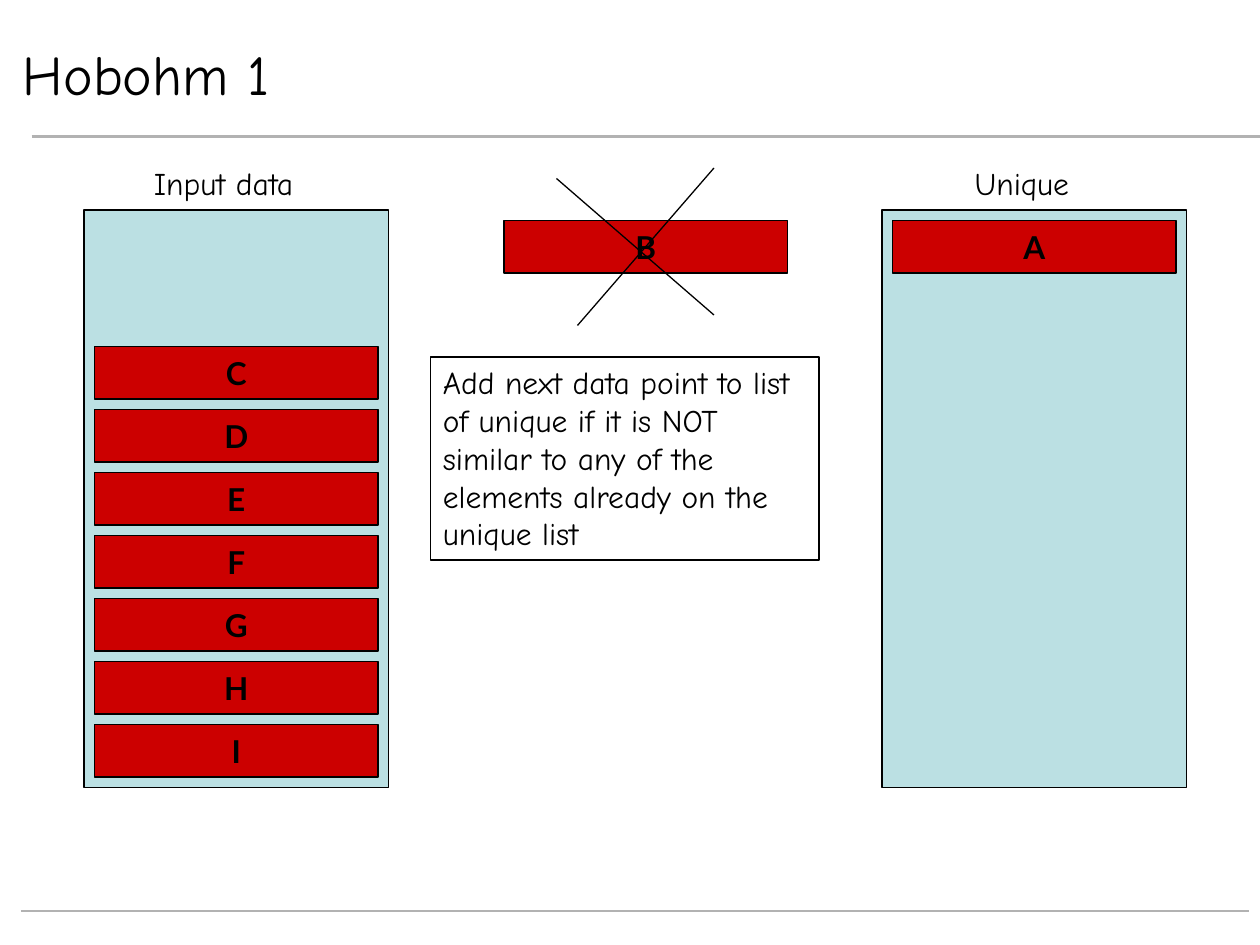
from typing import NamedTuple, Optional

from pptx import Presentation
from pptx.dml.color import RGBColor
from pptx.enum.shapes import MSO_CONNECTOR, MSO_SHAPE
from pptx.enum.text import MSO_ANCHOR as Anchor, MSO_AUTO_SIZE as AutoSize, PP_ALIGN as Align
from pptx.oxml.ns import qn
from pptx.util import Pt
from lxml.etree import SubElement

BLACK = RGBColor(0x00, 0x00, 0x00)
WHITE = RGBColor(0xFF, 0xFF, 0xFF)
GREY = RGBColor(0xB2, 0xB2, 0xB2)
PALE_BLUE = RGBColor(0xBB, 0xE0, 0xE3)
RED = RGBColor(0xCC, 0x00, 0x00)
HAND_FONT = "Comic Neue"
BLOCK_FONT = "Lato"
BLOCK_WIDTH, BLOCK_HEIGHT, BLOCK_STEP = 162, 30, 36
PANEL_TOP, PANEL_WIDTH, PANEL_HEIGHT, PANEL_PADDING = 120, 174, 330, 6
INPUT_LEFT, UNIQUE_LEFT, CANDIDATE_LEFT = 48, 504, 288
FIRST_ROW = PANEL_TOP + PANEL_PADDING


class Area(NamedTuple):
    left: float
    top: float
    width: float
    height: float


class Style(NamedTuple):
    font: str = HAND_FONT
    size: float = 18
    bold: bool = False
    align: Align = Align.LEFT
    anchor: Anchor = Anchor.TOP
    wrap: bool = True
    auto_size: AutoSize = AutoSize.NONE


class Stroke(NamedTuple):
    x1: float
    y1: float
    x2: float
    y2: float
    color: RGBColor = BLACK
    width: float = 0.75


class Block(NamedTuple):
    letter: str
    left: float
    row: int


BLOCK_STYLE = Style(BLOCK_FONT, bold=True, align=Align.CENTER, anchor=Anchor.MIDDLE, wrap=False)
LABEL_STYLE = Style(align=Align.CENTER, wrap=False, auto_size=AutoSize.SHAPE_TO_FIT_TEXT)
RULE_STYLE = Style(auto_size=AutoSize.SHAPE_TO_FIT_TEXT)
TITLE_STYLE = Style(size=32, anchor=Anchor.MIDDLE)

RULES = [
    Stroke(18, 78, 720, 78, GREY, 1.5),
    Stroke(12, 520.5, 714, 520.5, GREY, 1.5),
]
CROSS = [Stroke(318, 102, 408, 180), Stroke(330, 186, 408, 96)]
LABELS = [
    ("Input data", Area(75.6, 90, 104.4, 28.8)),
    ("Unique", Area(548.6, 90, 70.6, 28.8)),
]
BLOCKS = [
    Block("A", UNIQUE_LEFT + PANEL_PADDING, 0),
    *(Block(letter, INPUT_LEFT + PANEL_PADDING, row) for row, letter in enumerate("CDEFGHI", 2)),
    Block("B", CANDIDATE_LEFT, 0),
]


def write(shape, text: str, style: Style) -> None:
    frame = shape.text_frame
    frame.text = text
    frame.word_wrap = style.wrap
    frame.auto_size = style.auto_size
    frame.vertical_anchor = style.anchor
    para = frame.paragraphs[0]
    para.alignment = style.align
    font = para.runs[0].font
    font.name, font.size, font.bold = style.font, Pt(style.size), style.bold
    font.color.rgb = BLACK


def add_box(page, area: Area, fill: Optional[RGBColor], line: RGBColor = BLACK):
    box = page.shapes.add_shape(MSO_SHAPE.RECTANGLE, *map(Pt, area))
    box.shadow.inherit = False
    if fill is None:
        box.fill.background()
    else:
        box.fill.solid()
        box.fill.fore_color.rgb = fill
    box.line.color.rgb = line
    box.line.width = Pt(0.75)
    return box


def add_stroke(page, stroke: Stroke) -> None:
    ends = map(Pt, stroke[:4])
    connector = page.shapes.add_connector(MSO_CONNECTOR.STRAIGHT, *ends)
    connector.line.color.rgb = stroke.color
    connector.line.width = Pt(stroke.width)
    SubElement(connector.element.spPr, qn("a:effectLst"))


def add_block(page, block: Block) -> None:
    top = FIRST_ROW + block.row * BLOCK_STEP
    box = add_box(page, Area(block.left, top, BLOCK_WIDTH, BLOCK_HEIGHT), RED)
    write(box, block.letter, BLOCK_STYLE)


def main() -> None:
    """Build the Hobohm 1 slide."""
    deck = Presentation()
    deck.slide_width, deck.slide_height = Pt(720), Pt(540)
    page = deck.slides.add_slide(deck.slide_layouts[6])

    for rule in RULES:
        add_stroke(page, rule)
    write(add_box(page, Area(6, 24, 564, 36), WHITE, WHITE), "Hobohm 1", TITLE_STYLE)
    for left in (INPUT_LEFT, UNIQUE_LEFT):
        add_box(page, Area(left, PANEL_TOP, PANEL_WIDTH, PANEL_HEIGHT), PALE_BLUE)
    for text, area in LABELS:
        write(page.shapes.add_textbox(*map(Pt, area)), text, LABEL_STYLE)
    for block in BLOCKS:
        add_block(page, block)
    write(
        add_box(page, Area(246, 204, 222, 116), None),
        "Add next data point to list of unique if it is NOT similar to any of the "
        "elements already on the unique list",
        RULE_STYLE,
    )
    for stroke in CROSS:
        add_stroke(page, stroke)
    deck.save("out.pptx")


if __name__ == "__main__":
    main()
